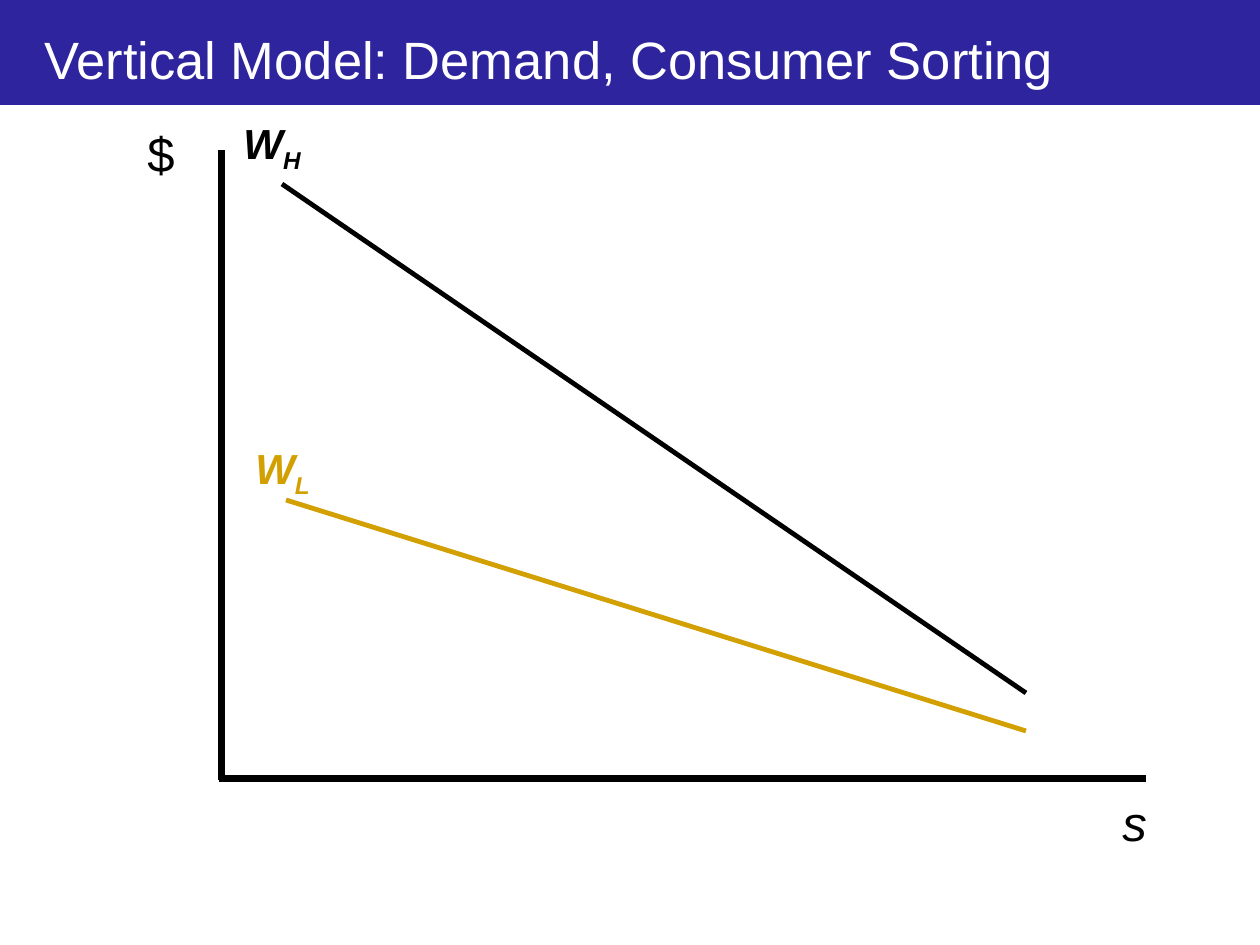
import pptx
import pptx.util
from pptx.dml.color import RGBColor
from pptx.enum.shapes import MSO_CONNECTOR, MSO_SHAPE
from pptx.enum.text import MSO_ANCHOR
from pptx.oxml.ns import qn
from lxml import etree

PX = 914400 // 126
BLACK = RGBColor(0x00, 0x00, 0x00)
WHITE = RGBColor(0xFF, 0xFF, 0xFF)
INDIGO = RGBColor(0x2E, 0x24, 0x9E)
GOLD = RGBColor(0xD2, 0xA0, 0x00)
FONT = "Arial"


def px(*lengths):
    return [pptx.util.Emu(length * PX) for length in lengths]


def add_band(slide, box, color):
    shape = slide.shapes.add_shape(MSO_SHAPE.RECTANGLE, *px(*box))
    shape.shadow.inherit = False
    shape.fill.solid()
    shape.fill.fore_color.rgb = color
    shape.line.fill.background()


def add_line(slide, start, end, color=BLACK, width=2.75):
    line = slide.shapes.add_connector(MSO_CONNECTOR.STRAIGHT, *px(*start, *end))
    line.line.color.rgb = color
    line.line.width = pptx.util.Pt(width)
    etree.SubElement(line._element.spPr, qn("a:effectLst"))


def add_text(slide, box, text, size=28, color=BLACK, bold=False, italic=False,
             subscript="", anchor=MSO_ANCHOR.TOP, line_spacing=None):
    frame = slide.shapes.add_textbox(*px(*box)).text_frame
    frame.word_wrap = True
    frame.vertical_anchor = anchor
    paragraph = frame.paragraphs[0]
    paragraph.line_spacing = line_spacing
    for part in filter(None, (text, subscript)):
        run = paragraph.add_run()
        run.text = part
        font = run.font
        font.name = FONT
        font.size = pptx.util.Pt(size)
        font.bold = bold
        font.italic = italic
        font.color.rgb = color
    if subscript:
        run._r.get_or_add_rPr().set("baseline", "-25000")


def add_curve(slide, start, end, label_box, subscript, color):
    """Draw a willingness-to-pay line with its W label."""
    add_line(slide, start, end, color)
    add_text(slide, label_box, "W", size=24, color=color, bold=True,
             italic=True, subscript=subscript)


def main():
    presentation = pptx.Presentation()
    presentation.slide_width, presentation.slide_height = px(1260, 945)
    slide = presentation.slides.add_slide(presentation.slide_layouts[6])

    add_band(slide, (0, 0, 1260, 105), INDIGO)
    add_text(slide, (32, 22, 1207, 73), "Vertical Model: Demand, Consumer Sorting",
             size=30, color=WHITE, anchor=MSO_ANCHOR.MIDDLE)

    add_line(slide, (222, 150), (222, 780), width=4)
    add_line(slide, (1146, 779), (219, 779), width=4)
    add_text(slide, (135, 113, 82, 103), "$", line_spacing=1.07)
    add_text(slide, (1110, 782, 97, 103), "s", italic=True, line_spacing=1.07)

    add_curve(slide, (1026, 693), (282, 184), (231, 111, 106, 63), "H", BLACK)
    add_curve(slide, (1026, 731), (286, 500), (243, 436, 113, 63), "L", GOLD)

    presentation.save("out.pptx")


if __name__ == "__main__":
    main()
